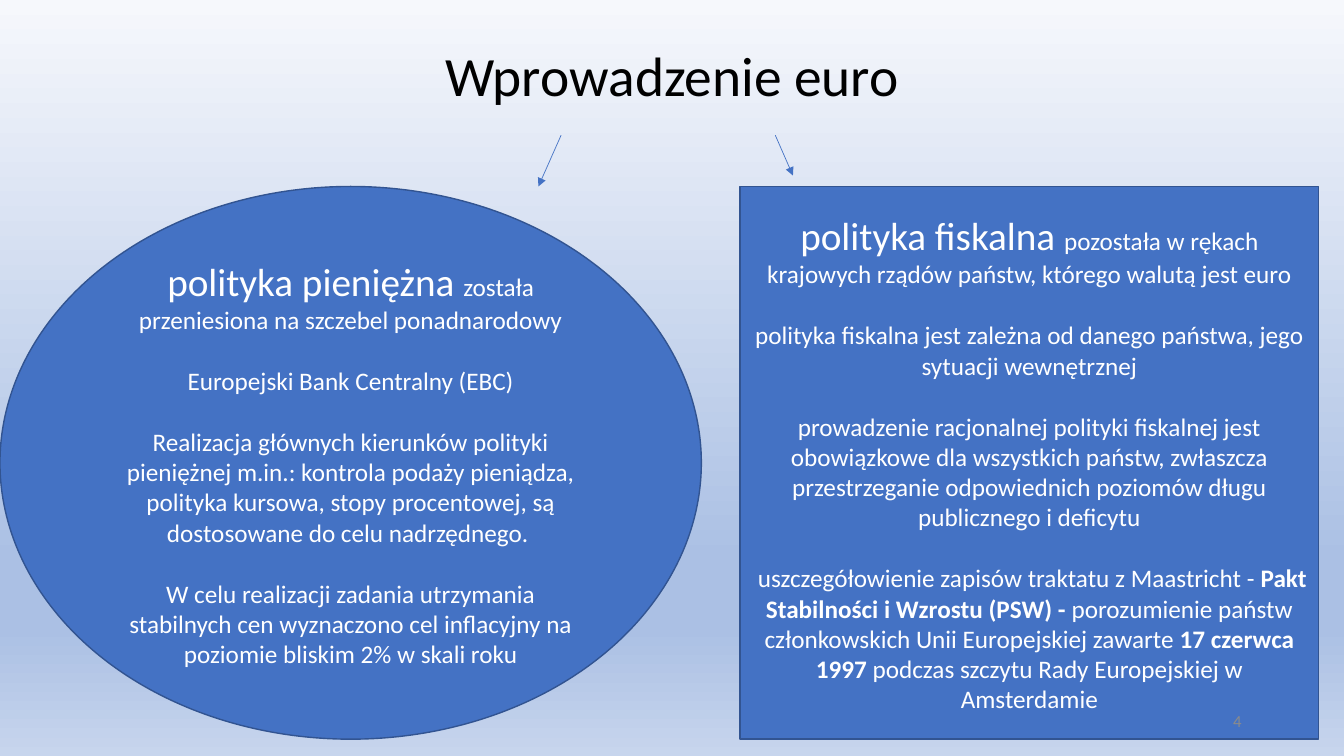
from copy import deepcopy

from pptx import Presentation
from pptx.dml.color import RGBColor
from pptx.enum.shapes import MSO_CONNECTOR as LINE, MSO_SHAPE as SHAPE
from pptx.enum.text import MSO_ANCHOR as ANCHOR, PP_ALIGN as ALIGN
from pptx.oxml.ns import qn
from pptx.oxml.xmlchemy import OxmlElement
from pptx.util import Inches, Pt

COLS, ROWS, CELL = 160, 90, 1 / 12
BODY, LEAD, GAP = 18, 28, 22

MONETARY = [
    [("polityka pieniężna ", LEAD, False),
     ("została przeniesiona na szczebel ponadnarodowy", BODY, False)],
    [("Europejski Bank Centralny (EBC)", BODY, False)],
    [("Realizacja głównych kierunków polityki pieniężnej m.in.: kontrola podaży "
      "pieniądza, polityka kursowa, stopy procentowej, są dostosowane do celu "
      "nadrzędnego. ", BODY, False)],
    [("W celu realizacji zadania utrzymania stabilnych cen wyznaczono cel "
      "inflacyjny na poziomie bliskim 2% w skali roku", BODY, False)],
]
FISCAL = [
    [("polityka fiskalna ", LEAD, False),
     ("pozostała w rękach krajowych rządów państw, którego walutą jest euro", BODY, False)],
    [("polityka fiskalna jest zależna od danego państwa, jego sytuacji wewnętrznej",
      BODY, False)],
    [("prowadzenie racjonalnej polityki fiskalnej jest obowiązkowe dla wszystkich "
      "państw, zwłaszcza przestrzeganie odpowiednich poziomów długu publicznego "
      "i deficytu", BODY, False)],
    [(" uszczegółowienie zapisów traktatu z Maastricht - ", BODY, False),
     ("Pakt Stabilności i Wzrostu (PSW) - ", BODY, True),
     ("porozumienie państw członkowskich Unii Europejskiej zawarte ", BODY, False),
     ("17 czerwca 1997", BODY, True),
     (" podczas szczytu Rady Europejskiej w Amsterdamie", BODY, False)],
]


def rgb(value):
    return RGBColor.from_string(value)


def grid(*cells):
    return [Inches(n * CELL) for n in cells]


class Deck:
    font = "Calibri"
    accent, edge, light = "4472C4", "325491", "FFFFFF"

    def __init__(self):
        self.prs = Presentation()
        self.prs.slide_width, self.prs.slide_height = grid(COLS, ROWS)
        self.s = self.prs.slides.add_slide(self.prs.slide_layouts[6])

    def background(self, stops):
        fill = self.s.background.fill
        fill.gradient()
        fill.gradient_angle = 270
        gs_list = self.s.element.find(".//" + qn("a:gsLst"))
        while len(gs_list) < len(stops):
            gs_list.append(deepcopy(gs_list[0]))
        for stop, (position, color) in zip(fill.gradient_stops, stops):
            stop.position = position
            stop.color.rgb = rgb(color)

    def style(self, r, size, color, bold=False):
        r.font.name, r.font.size, r.font.bold = self.font, Pt(size), bold
        r.font.color.rgb = rgb(color)

    def label(self, text, box, size, color, align, spacing=1.0):
        tf = self.s.shapes.add_textbox(*grid(*box)).text_frame
        tf.word_wrap = True
        tf.vertical_anchor = ANCHOR.MIDDLE
        tf.text = text
        p = tf.paragraphs[0]
        p.alignment, p.line_spacing = align, spacing
        self.style(p.runs[0], size, color)

    def panel(self, kind, box, paragraphs):
        sp = self.s.shapes.add_shape(kind, *grid(*box))
        sp.shadow.inherit = False
        sp.fill.solid()
        sp.fill.fore_color.rgb = rgb(self.accent)
        sp.line.color.rgb = rgb(self.edge)
        sp.line.width = Pt(1)
        tf = sp.text_frame
        tf.word_wrap = True
        tf.vertical_anchor = ANCHOR.MIDDLE
        for i, runs in enumerate(paragraphs):
            p = tf.add_paragraph() if i else tf.paragraphs[0]
            p.alignment = ALIGN.CENTER
            p.space_before = Pt(GAP if i else 0)
            for text, size, bold in runs:
                r = p.add_run()
                r.text = text
                self.style(r, size, self.light, bold)

    def arrow(self, *ends):
        cx = self.s.shapes.add_connector(LINE.STRAIGHT, *grid(*ends))
        cx.line.color.rgb = rgb(self.accent)
        cx.line.width = Pt(0.5)
        tail = OxmlElement("a:tailEnd")
        tail.set("type", "triangle")
        cx.line._get_or_add_ln().append(tail)
        cx._element.spPr.append(OxmlElement("a:effectLst"))


def main():
    deck = Deck()
    deck.background([(0, "F6F8FC"), (0.74, "ABC0E4"), (0.83, "ABC0E4"), (1, "C7D5ED")])
    deck.label("Wprowadzenie euro", (11, 4.8, 138, 9.1), 39.6, "000000", ALIGN.CENTER, 0.9)
    top, height = 22.2, 65.8
    deck.panel(SHAPE.OVAL, (0, top, 83.5, height), MONETARY)
    deck.arrow(66.8, 16.1, 64.1, top)
    deck.panel(SHAPE.RECTANGLE, (88.1, top, 68.9, height), FISCAL)
    deck.arrow(92.3, 16.1, 94.4, 20.9)
    deck.label("4", (113, 83.4, 36, 4.8), 12, "8B8B8B", ALIGN.RIGHT)
    deck.prs.save("out.pptx")


if __name__ == "__main__":
    main()
